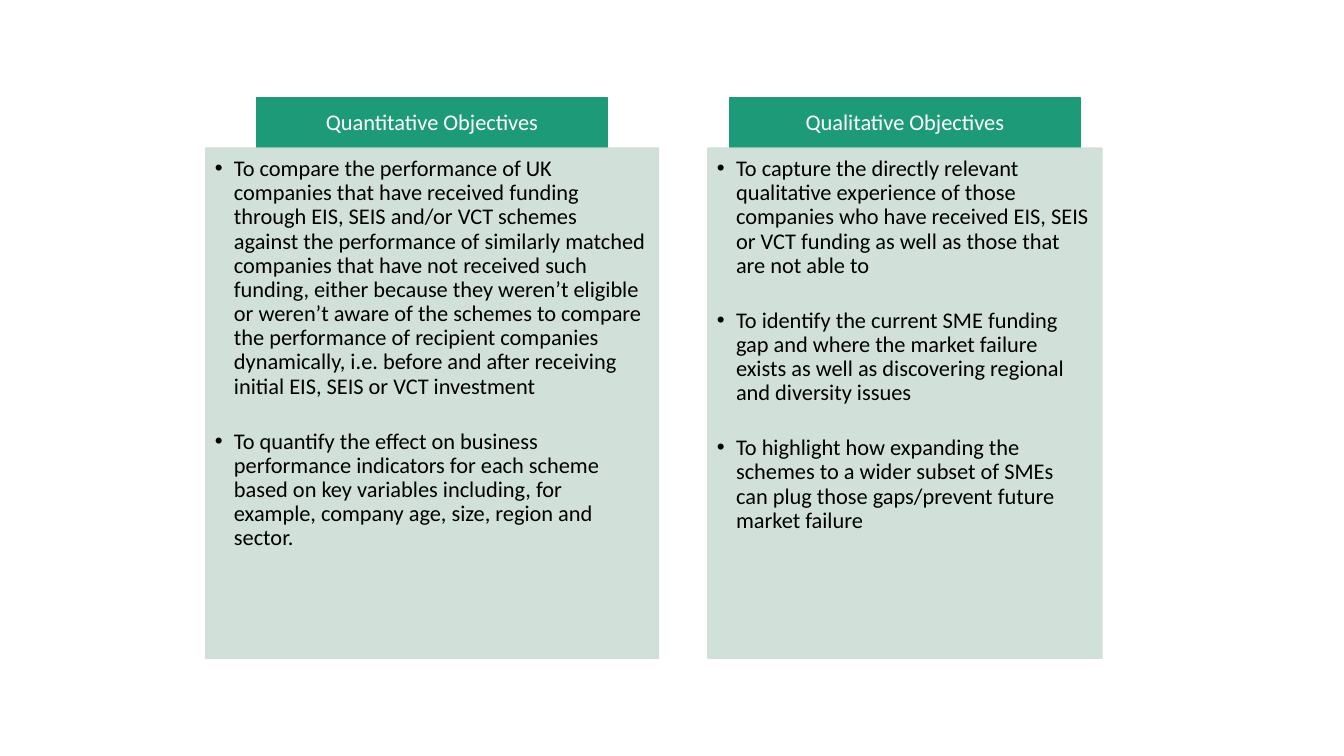
"""Build a slide that sets quantitative beside qualitative objectives."""
from dataclasses import dataclass

from pptx import Presentation
from pptx import util as u
from pptx.dml.color import RGBColor
from pptx.enum import text
from pptx.oxml import ns
from pptx.shapes.placeholder import SlidePlaceholder
from pptx.slide import Slide
from pptx.text.text import _Paragraph as Paragraph

PX = u.Inches(1) // 100
GREEN = RGBColor(0x1D, 0x9A, 0x78)
PALE_GREEN = RGBColor(0xCD, 0xDE, 0xD6)
WHITE = RGBColor(0xFF, 0xFF, 0xFF)
BLACK = RGBColor(0, 0, 0)

COMPARISON_LAYOUT = 4
HEADER_TOP, HEADER_WIDTH, HEADER_HEIGHT = 97, 347, 50
BODY_TOP, BODY_HEIGHT = 147, 506
BULLET_INDENT = 19
HEADER_INSETS = (12, 7, 12, 7)
BODY_INSETS = (9, 9, 12, 14)


@dataclass(frozen=True)
class Column:
    """A headed list of objectives with its places in px."""
    heading: str
    header_left: int
    body_left: int
    body_width: int
    objectives: tuple[str, ...]


COLUMNS = (
    Column("Quantitative Objectives", 255, 204, 449, (
        "To compare the performance of UK companies that have received funding "
        "through EIS, SEIS and/or VCT schemes against the performance of "
        "similarly matched companies that have not received such funding, either "
        "because they weren’t eligible or weren’t aware of the schemes to compare "
        "the performance of recipient companies dynamically, i.e. before and "
        "after receiving initial EIS, SEIS or VCT investment",
        "To quantify the effect on business performance indicators for each "
        "scheme based on key variables including, for example, company age, "
        "size, region and sector.",
    )),
    Column("Qualitative Objectives", 724, 702, 391, (
        "To capture the directly relevant qualitative experience of those "
        "companies who have received EIS, SEIS or VCT funding as well as those "
        "that are not able to",
        "To identify the current SME funding gap and where the market failure "
        "exists as well as discovering regional and diversity issues",
        "To highlight how expanding the schemes to a wider subset of SMEs can "
        "plug those gaps/prevent future market failure",
    )),
)


def style_box(box: SlidePlaceholder, area: tuple[int, int, int, int],
              insets: tuple[int, int, int, int], color: RGBColor,
              anchor: text.MSO_ANCHOR) -> None:
    """Place a placeholder and set its fill, outline and text frame."""
    box.left, box.top, box.width, box.height = (side * PX for side in area)
    box.fill.solid()
    box.fill.fore_color.rgb = color
    box.line.fill.solid()
    box.line.fill.fore_color.rgb = color
    box.line.width = u.Pt(1)
    frame = box.text_frame
    frame.word_wrap = True
    frame.auto_size = text.MSO_AUTO_SIZE.NONE
    frame.vertical_anchor = anchor
    (frame.margin_left, frame.margin_top,
     frame.margin_right, frame.margin_bottom) = (inset * PX for inset in insets)


def make_translucent(box: SlidePlaceholder, percent: int) -> None:
    """Give the fill and outline of a box the same opacity."""
    for color in box.element.spPr.iter(ns.qn("a:srgbClr")):
        alpha = color.makeelement(ns.qn("a:alpha"), {"val": str(percent * 1000)})
        color.append(alpha)


def write_para(para: Paragraph, words: str, color: RGBColor) -> None:
    """Write one run in the common type style."""
    para.line_spacing = 0.9
    para.space_before = u.Pt(0)
    span = para.add_run()
    span.text = words
    span.font.name = "Calibri"
    span.font.size = u.Pt(16)
    span.font.bold = False
    span.font.color.rgb = color


def add_bullet(para: Paragraph) -> None:
    """Give a paragraph a hanging round bullet."""
    props = para._p.get_or_add_pPr()
    props.set("marL", str(BULLET_INDENT * PX))
    props.set("indent", str(-BULLET_INDENT * PX))
    props.append(props.makeelement(ns.qn("a:buChar"), {"char": "•"}))


def draw_header(box: SlidePlaceholder, column: Column) -> None:
    """Draw the heading bar of a column."""
    area = (column.header_left, HEADER_TOP, HEADER_WIDTH, HEADER_HEIGHT)
    style_box(box, area, HEADER_INSETS, GREEN, text.MSO_ANCHOR.MIDDLE)
    para = box.text_frame.paragraphs[0]
    para.alignment = text.PP_ALIGN.CENTER
    write_para(para, column.heading, WHITE)


def draw_body(box: SlidePlaceholder, column: Column) -> None:
    """Draw the panel that lists the objectives of a column."""
    area = (column.body_left, BODY_TOP, column.body_width, BODY_HEIGHT)
    style_box(box, area, BODY_INSETS, PALE_GREEN, text.MSO_ANCHOR.TOP)
    make_translucent(box, 90)
    frame = box.text_frame
    for index, objective in enumerate(column.objectives):
        para = frame.add_paragraph() if index else frame.paragraphs[0]
        write_para(para, objective, BLACK)
        para.space_after = u.Pt(22)
        add_bullet(para)


def draw_columns(page: Slide) -> None:
    """Fill the paired placeholders and drop the unused title."""
    title, *boxes = page.placeholders
    title.element.getparent().remove(title.element)
    for header, body, column in zip(boxes[::2], boxes[1::2], COLUMNS):
        draw_header(header, column)
        draw_body(body, column)


def main() -> None:
    """Create and save the deck."""
    deck = Presentation()
    deck.slide_width, deck.slide_height = 1333 * PX, 750 * PX
    draw_columns(deck.slides.add_slide(deck.slide_layouts[COMPARISON_LAYOUT]))
    deck.save("out.pptx")


if __name__ == "__main__":
    main()
